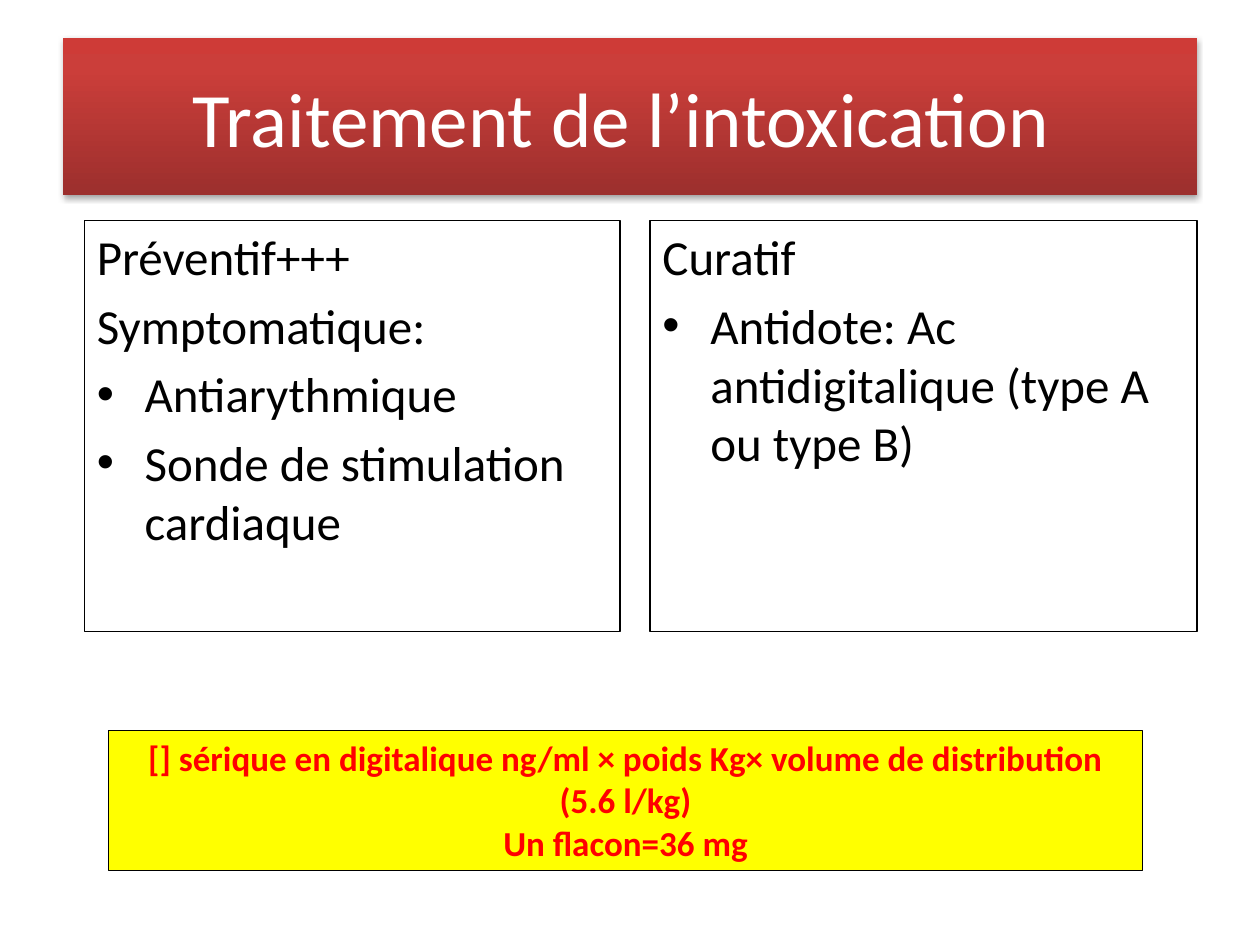
from lxml import etree
from pptx import Presentation, util as u
from pptx.dml.color import RGBColor
from pptx.enum import text as t
from pptx.oxml import parse_xml
from pptx.oxml.ns import qn

WHITE = RGBColor(255, 255, 255)
BLACK = RGBColor(0, 0, 0)
RED = RGBColor(255, 0, 0)
YELLOW = RGBColor(255, 255, 0)
BANNER = ((0, RGBColor(0x9C, 0x2F, 0x2D)),
          (80, RGBColor(0xCB, 0x3E, 0x3A)),
          (100, RGBColor(0xCE, 0x3B, 0x37)))
FONT = "Calibri"
HANG = u.Inches(0.38)
NS = 'xmlns:a="http://schemas.openxmlformats.org/drawingml/2006/main"'


def write(para, words, size=28, color=BLACK, bold=False, align=None):
    run = para.add_run()
    run.text = words
    font = run.font
    font.name, font.size, font.bold = FONT, u.Pt(size), bold
    font.color.rgb = color
    para.alignment = align


def hang(para, mark):
    """Give a hanging indent, with a bullet if mark is set."""
    props = para._p.get_or_add_pPr()
    props.set("marL", str(HANG))
    props.set("indent", str(-HANG))
    if mark:
        etree.SubElement(props, qn("a:buFont"), typeface="Arial")
        etree.SubElement(props, qn("a:buChar"), char="•")
    else:
        etree.SubElement(props, qn("a:buNone"))


def glow(shape):
    """Fill with the banner gradient, dark at the foot, and a soft shadow."""
    stops = "".join(
        f'<a:gs pos="{pos * 1000}"><a:srgbClr val="{color}"/></a:gs>'
        for pos, color in BANNER)
    props = shape._element.spPr
    props.append(parse_xml(
        f'<a:gradFill {NS} rotWithShape="1"><a:gsLst>{stops}</a:gsLst>'
        '<a:lin ang="16200000" scaled="0"/></a:gradFill>'))
    props.append(parse_xml(
        f'<a:effectLst {NS}><a:outerShdw blurRad="40000" dist="23000" '
        'dir="5400000" rotWithShape="0"><a:srgbClr val="000000">'
        '<a:alpha val="35000"/></a:srgbClr></a:outerShdw></a:effectLst>'))


class Page:
    """The slide and its style; places are in percent of the slide's size."""

    def __init__(self, deck):
        self.wide, self.high = deck.slide_width, deck.slide_height
        self.slide = deck.slides.add_slide(deck.slide_layouts[5])

    def spot(self, x, y, w, h):
        return [round(share * side / 100) for share, side in
                zip((x, y, w, h), (self.wide, self.high) * 2)]

    def title(self, words, place):
        head = self.slide.shapes.title
        head.left, head.top, head.width, head.height = self.spot(*place)
        glow(head)
        head.text_frame.vertical_anchor = t.MSO_ANCHOR.MIDDLE
        write(head.text_frame.paragraphs[0], words, size=44, color=WHITE,
              align=t.PP_ALIGN.CENTER)

    def box(self, place, count):
        """Draw a framed text box and return it with count paragraphs."""
        box = self.slide.shapes.add_textbox(*self.spot(*place))
        box.line.color.rgb = BLACK
        box.line.width = u.Pt(0.75)
        frame = box.text_frame
        frame.word_wrap = True
        for _ in range(count - 1):
            frame.add_paragraph()
        return box, frame.paragraphs

    def panel(self, place, lines):
        _, paras = self.box(place, len(lines))
        for para, (words, mark) in zip(paras, lines):
            write(para, words)
            para.space_before = u.Pt(5.6)
            hang(para, mark)

    def note(self, place, lines):
        box, paras = self.box(place, len(lines))
        box.fill.solid()
        box.fill.fore_color.rgb = YELLOW
        box.text_frame.auto_size = t.MSO_AUTO_SIZE.SHAPE_TO_FIT_TEXT
        for para, words in zip(paras, lines):
            write(para, words, size=20, color=RED, bold=True,
                  align=t.PP_ALIGN.CENTER)


def main():
    deck = Presentation()
    deck.slide_width, deck.slide_height = u.Inches(10), u.Inches(7.5)
    page = Page(deck)
    page.title("Traitement de l’intoxication ", (5, 4, 90, 16.67))
    top, tall = 23.33, 43.5
    page.panel((6.7, top, 42.5, tall), [
        ("Préventif+++", False),
        ("Symptomatique:", False),
        ("Antiarythmique", True),
        ("Sonde de stimulation cardiaque", True)])
    page.panel((51.6, top, 43.4, tall), [
        ("Curatif", False),
        ("Antidote: Ac antidigitalique (type A ou type B)", True)])
    page.note((8.6, 77.33, 82.1, 14.8), [
        "[] sérique en digitalique ng/ml × poids Kg× volume de distribution "
        "(5.6 l/kg)",
        "Un flacon=36 mg"])
    deck.save("out.pptx")


if __name__ == "__main__":
    main()
